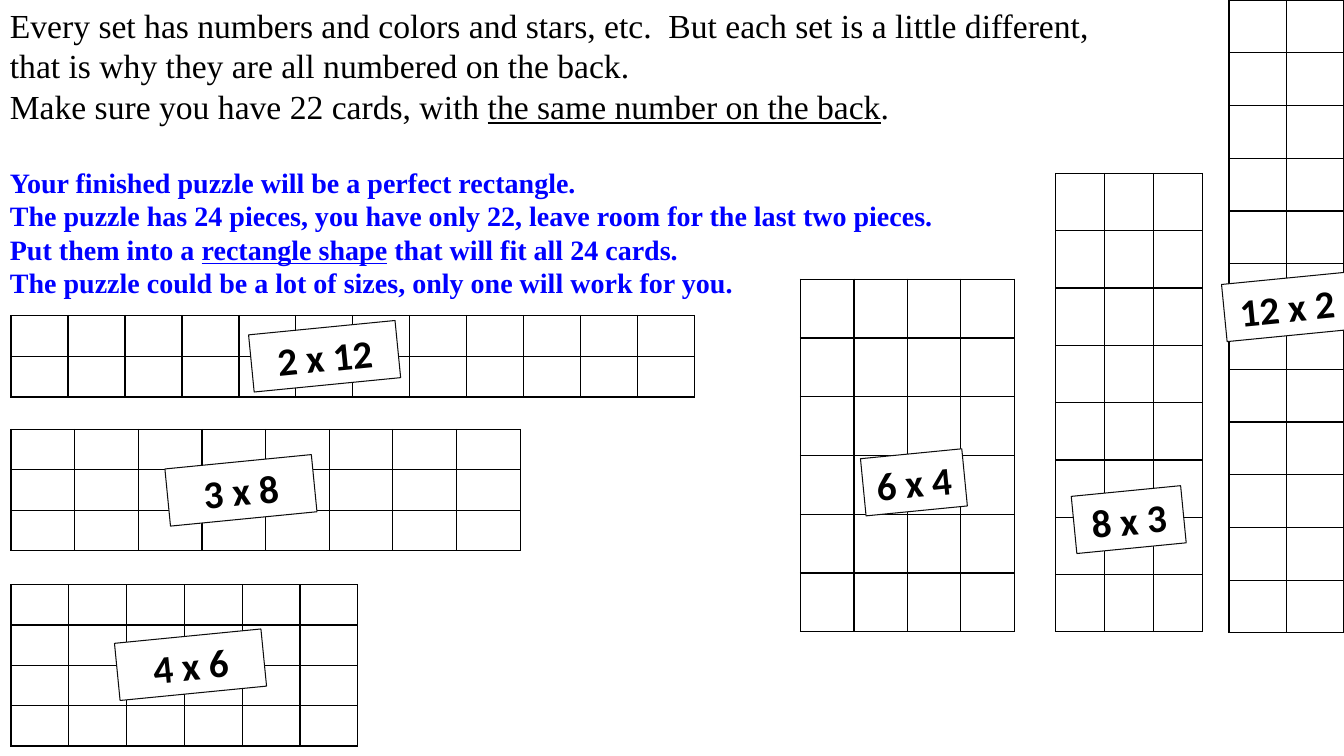
"""Build the card puzzle slide with its six possible rectangle sizes."""
from dataclasses import dataclass
from typing import NamedTuple

from lxml import etree
from pptx import Presentation
from pptx.dml.color import RGBColor
from pptx.enum.shapes import MSO_SHAPE
from pptx.enum.text import MSO_ANCHOR, PP_ALIGN
from pptx.oxml.ns import qn
from pptx.slide import Slide
from pptx.table import _Cell
from pptx.util import Inches, Pt

RECTANGLE = MSO_SHAPE.RECTANGLE
MIDDLE = MSO_ANCHOR.MIDDLE
CENTER = PP_ALIGN.CENTER
BLANK_LAYOUT = 6


@dataclass(frozen=True)
class Theme:
    black: RGBColor = RGBColor(0x00, 0x00, 0x00)
    blue: RGBColor = RGBColor(0x00, 0x00, 0xFF)
    white: RGBColor = RGBColor(0xFF, 0xFF, 0xFF)
    label_line: RGBColor = RGBColor(0x0D, 0x0D, 0x0D)
    text_font: str = "Times New Roman"
    label_font: str = "Calibri"
    intro_size: Pt = Pt(24)
    rules_size: Pt = Pt(20)
    label_size: Pt = Pt(28)
    paragraph_gap: Pt = Pt(28)
    grid_width: Pt = Pt(1)
    label_width: Pt = Pt(0.75)
    label_height: float = 0.57
    label_angle: float = -5.6


class Span(NamedTuple):
    text: str
    underline: bool = False


class Block(NamedTuple):
    lines: list[list[Span]]
    size: Pt
    color: RGBColor
    bold: bool
    space_before: Pt


class Puzzle(NamedTuple):
    rows: int
    cols: int
    left: float
    top: float
    width: float
    height: float
    label_left: float
    label_top: float
    label_width: float


THEME = Theme()

BLOCKS = [
    Block([
        [Span("Every set has numbers and colors and stars, etc.  But each set is a little different,")],
        [Span("that is why they are all numbered on the back.")],
        [Span("Make sure you have 22 cards, with "),
         Span("the same number on the back", True), Span(".")],
    ], THEME.intro_size, THEME.black, False, Pt(0)),
    Block([
        [Span("Your finished puzzle will be a perfect rectangle.")],
        [Span("The puzzle has 24 pieces, you have only 22, leave room for the last two pieces.")],
        [Span("Put them into a "), Span("rectangle shape", True),
         Span(" that will fit all 24 cards.")],
        [Span("The puzzle could be a lot of sizes, only one will work for you.")],
    ], THEME.rules_size, THEME.blue, True, THEME.paragraph_gap),
]

PUZZLES = [
    Puzzle(2, 12, 0.11, 3.13, 6.78, 0.81, 2.49, 3.25, 1.46),
    Puzzle(3, 8, 0.11, 4.26, 5.05, 1.2, 1.66, 4.58, 1.46),
    Puzzle(4, 6, 0.11, 5.8, 3.44, 1.6, 1.16, 6.31, 1.46),
    Puzzle(12, 2, 12.19, 0, 1.14, 6.28, 12.14, 2.76, 1.25),
    Puzzle(8, 3, 10.47, 1.72, 1.46, 4.55, 10.65, 4.87, 1.09),
    Puzzle(6, 4, 7.94, 2.77, 2.12, 3.5, 8.56, 4.5, 1.01),
]


def add_instructions(s: Slide) -> None:
    """Write the two blocks of instructions in one text box."""
    tf = s.shapes.add_textbox(0, 0, Inches(13.33), Inches(3.06)).text_frame
    tf.word_wrap = True
    for i, block in enumerate(BLOCKS):
        p = tf.add_paragraph() if i else tf.paragraphs[0]
        p.space_before = block.space_before
        p.font.size = block.size
        for j, line in enumerate(block.lines):
            if j:
                p.add_line_break()
            for span in line:
                r = p.add_run()
                r.text = span.text
                r.font.name = THEME.text_font
                r.font.size = block.size
                r.font.bold = block.bold
                r.font.underline = span.underline
                r.font.color.rgb = block.color


def outline_cell(cell: _Cell) -> None:
    """Give a cell a solid border on all four sides."""
    props = cell._tc.get_or_add_tcPr()
    for side in ("a:lnL", "a:lnR", "a:lnT", "a:lnB"):
        line = etree.SubElement(props, qn(side), w=str(THEME.grid_width))
        fill = etree.SubElement(line, qn("a:solidFill"))
        etree.SubElement(fill, qn("a:srgbClr"), val=str(THEME.black))


def add_grid(s: Slide, puzzle: Puzzle) -> None:
    """Draw one puzzle as a table of equal empty cells."""
    table = s.shapes.add_table(
        puzzle.rows, puzzle.cols, Inches(puzzle.left), Inches(puzzle.top),
        Inches(puzzle.width), Inches(puzzle.height)).table
    table.first_row = False
    table.horz_banding = False
    for cell in table.iter_cells():
        outline_cell(cell)
        cell.fill.solid()
        cell.fill.fore_color.rgb = THEME.white


def add_label(s: Slide, puzzle: Puzzle) -> None:
    """Place the tilted size label of one puzzle."""
    sp = s.shapes.add_shape(
        RECTANGLE, Inches(puzzle.label_left), Inches(puzzle.label_top),
        Inches(puzzle.label_width), Inches(THEME.label_height))
    sp.rotation = THEME.label_angle
    sp.shadow.inherit = False
    sp.fill.solid()
    sp.fill.fore_color.rgb = THEME.white
    sp.line.color.rgb = THEME.label_line
    sp.line.width = THEME.label_width
    tf = sp.text_frame
    tf.word_wrap = False
    tf.vertical_anchor = MIDDLE
    p = tf.paragraphs[0]
    p.alignment = CENTER
    r = p.add_run()
    r.text = f"{puzzle.rows} x {puzzle.cols}"
    r.font.name = THEME.label_font
    r.font.size = THEME.label_size
    r.font.bold = True
    r.font.color.rgb = THEME.black


def main() -> None:
    """Build and save the slide."""
    prs = Presentation()
    prs.slide_width = Inches(13.33)
    prs.slide_height = Inches(7.5)
    s = prs.slides.add_slide(prs.slide_layouts[BLANK_LAYOUT])
    add_instructions(s)
    for puzzle in PUZZLES:
        add_grid(s, puzzle)
    for puzzle in PUZZLES:
        add_label(s, puzzle)
    prs.save("out.pptx")


if __name__ == "__main__":
    main()
